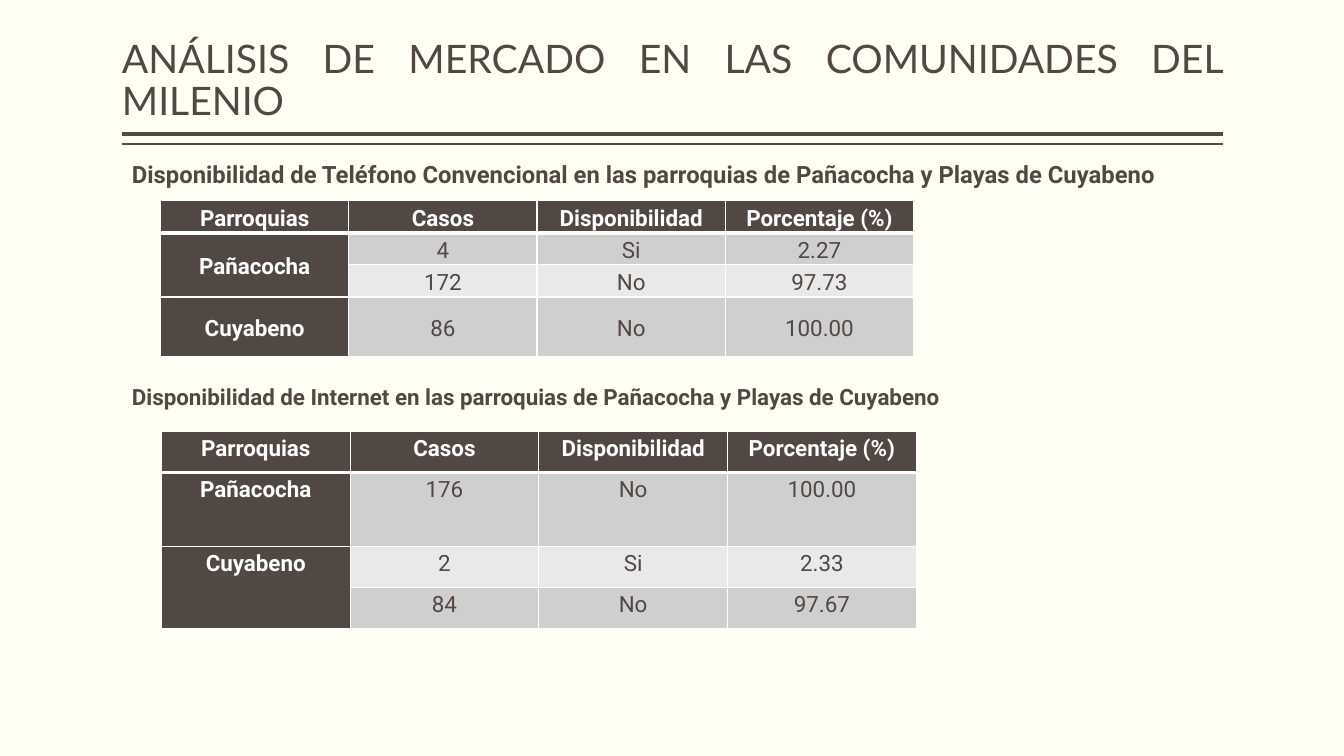
from dataclasses import dataclass
from lxml.etree import SubElement
from pptx import Presentation
from pptx.dml.color import RGBColor
from pptx.enum.shapes import MSO_CONNECTOR
from pptx.enum.text import MSO_ANCHOR, PP_ALIGN
from pptx.oxml import parse_xml
from pptx.oxml.ns import nsdecls, qn
from pptx.util import Pt

TITLE = "ANÁLISIS DE MERCADO EN LAS COMUNIDADES DEL MILENIO"
HEADER = ("Parroquias", "Casos", "Disponibilidad", "Porcentaje (%)")
SECTIONS = [
    dict(
        heading="Disponibilidad de Teléfono Convencional en las parroquias de Pañacocha y Playas de Cuyabeno",
        heading_box=(87.1, 110.2, 772.6, 28), heading_size=17,
        corner=(114.7, 143.4), col_width=134.5, heights=(22.8, 23, 23, 42.5),
        anchor=MSO_ANCHOR.MIDDLE, merge=(1, 2),
        rows=[
            ("Pañacocha", "4", "Si", "2.27"),
            ("", "172", "No", "97.73"),
            ("Cuyabeno", "86", "No", "100.00"),
        ],
    ),
    dict(
        heading="Disponibilidad de Internet en las parroquias de Pañacocha y Playas de Cuyabeno",
        heading_box=(87.1, 270.2, 613.4, 26.6), heading_size=16,
        corner=(115.3, 308.2), col_width=134.8, heights=(29.3, 53.1, 29.3, 29.3),
        anchor=MSO_ANCHOR.TOP, merge=(2, 3),
        rows=[
            ("Pañacocha", "176", "No", "100.00"),
            ("Cuyabeno", "2", "Si", "2.33"),
            ("", "84", "No", "97.67"),
        ],
    ),
]
RULES = [(95.6, 3), (102.8, 1)]
RULE_LEFT, RULE_RIGHT = 87.1, 873.4


@dataclass(frozen=True)
class Theme:
    paper: str = "FFFFF3"
    dark: str = "514843"
    white: str = "FFFFFF"
    bands: tuple = ("D0CFCF", "E9E9E9")
    title_font: str = "Lato"
    body_font: str = "Roboto"
    title_size: int = 28
    table_size: int = 16


T = Theme()


def rgb(value):
    return RGBColor.from_string(value)


def write(tf, text, size=T.table_size, font=T.body_font, color=T.dark,
          bold=False, align=PP_ALIGN.JUSTIFY, spacing=1.0):
    p = tf.paragraphs[0]
    p.alignment = align
    p.line_spacing = spacing
    p.space_before = p.space_after = Pt(0)
    r = p.add_run()
    r.text = text
    r.font.size = Pt(size)
    r.font.name = font
    r.font.bold = bold
    r.font.color.rgb = rgb(color)


def set_borders(cell, top, bottom):
    tcPr = cell._tc.get_or_add_tcPr()
    widths = (("L", 1), ("R", 1), ("T", top), ("B", bottom))
    for i, (side, width) in enumerate(widths):
        ln = parse_xml(
            f'<a:ln{side} {nsdecls("a")} w="{Pt(width)}"><a:solidFill>'
            f'<a:srgbClr val="{T.white}"/></a:solidFill></a:ln{side}>')
        tcPr.insert(i, ln)


def add_rule(s, y, width):
    line = s.shapes.add_connector(
        MSO_CONNECTOR.STRAIGHT, Pt(RULE_LEFT), Pt(y), Pt(RULE_RIGHT), Pt(y))
    line.line.color.rgb = rgb(T.dark)
    line.line.width = Pt(width)
    SubElement(line._element.spPr, qn("a:effectLst"))


def add_title(s):
    sp = s.shapes.title
    sp.left, sp.top, sp.width, sp.height = (Pt(v) for v in (87.1, 5.8, 786.3, 86.4))
    tf = sp.text_frame
    tf.word_wrap = True
    tf.vertical_anchor = MSO_ANCHOR.BOTTOM
    tf.margin_left = tf.margin_right = 0
    write(tf, TITLE, size=T.title_size, font=T.title_font, spacing=0.9)


def add_heading(s, section):
    sp = s.shapes.add_textbox(*(Pt(v) for v in section["heading_box"]))
    tf = sp.text_frame
    tf.word_wrap = True
    tf.vertical_anchor = MSO_ANCHOR.MIDDLE
    write(tf, section["heading"], size=section["heading_size"], bold=True)


def add_data_table(s, section):
    rows = [HEADER] + section["rows"]
    heights = section["heights"]
    left, top = section["corner"]
    col_width = section["col_width"]
    table = s.shapes.add_table(
        len(rows), len(HEADER), Pt(left), Pt(top),
        Pt(col_width * len(HEADER)), Pt(sum(heights))).table
    for col in table.columns:
        col.width = Pt(col_width)
    for i, row in enumerate(rows):
        table.rows[i].height = Pt(heights[i])
        for j, text in enumerate(row):
            cell = table.cell(i, j)
            strong = i == 0 or j == 0
            cell.fill.solid()
            cell.fill.fore_color.rgb = rgb(T.dark if strong else T.bands[(i - 1) % 2])
            cell.margin_left = cell.margin_right = Pt(5)
            cell.margin_top = cell.margin_bottom = 0
            cell.vertical_anchor = section["anchor"]
            set_borders(cell, top=3 if i == 1 else 1, bottom=3 if i == 0 else 1)
            if text:
                write(cell.text_frame, text, color=T.white if strong else T.dark,
                      bold=strong, align=PP_ALIGN.CENTER, spacing=1.15)
    first, last = section["merge"]
    table.cell(first, 0).merge(table.cell(last, 0))


def main():
    prs = Presentation()
    prs.slide_width, prs.slide_height = Pt(960), Pt(540)
    s = prs.slides.add_slide(prs.slide_layouts[5])
    s.background.fill.solid()
    s.background.fill.fore_color.rgb = rgb(T.paper)
    for y, width in RULES:
        add_rule(s, y, width)
    add_title(s)
    for section in SECTIONS:
        add_data_table(s, section)
        add_heading(s, section)
    prs.save("out.pptx")


if __name__ == "__main__":
    main()
